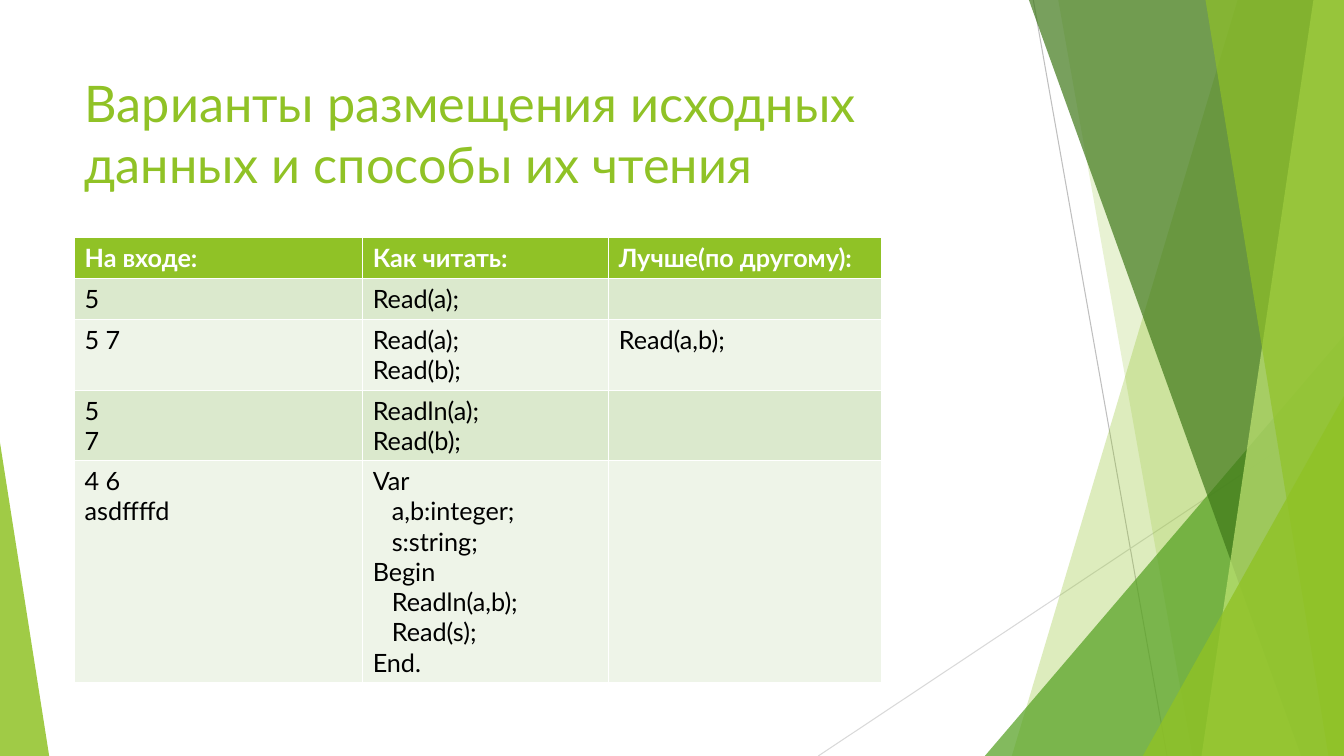
from lxml import etree
from pptx import Presentation
from pptx import util as u
from pptx.dml.color import RGBColor
from pptx.enum import shapes, text
from pptx.oxml import ns

WIDTH, HEIGHT = 33.87, 19.05
GREEN, DARK, LEAF, LIME = "90C226", "3F7819", "54A021", "C0E474"
BANDS = ("EEF4E8", "DBE9CD")


def colour(value):
    return RGBColor.from_string(value)


class SlideBuilder:
    font = "Lato"

    def __init__(self, deck):
        self.page = deck.slides.add_slide(deck.slide_layouts[5])

    def style(self, para, size, hex_colour, bold=False):
        para.font.name = self.font
        para.font.size = u.Pt(size)
        para.font.bold = bold
        para.font.color.rgb = colour(hex_colour)
        para.alignment = text.PP_ALIGN.LEFT

    def line(self, x1, y1, x2, y2, hex_colour):
        line = self.page.shapes.add_connector(
            shapes.MSO_CONNECTOR.STRAIGHT, *map(u.Cm, (x1, y1, x2, y2)))
        line.line.color.rgb = colour(hex_colour)
        line.line.width = u.Pt(0.75)
        etree.SubElement(line.element.spPr, ns.qn("a:effectLst"))

    def paint(self, shape, hex_colour, opacity):
        shape.shadow.inherit = False
        shape.line.fill.background()
        shape.fill.solid()
        shape.fill.fore_color.rgb = colour(hex_colour)
        tint = shape.element.spPr.find(".//" + ns.qn("a:srgbClr"))
        etree.SubElement(tint, ns.qn("a:alpha"), val=str(opacity * 1000))

    def band(self, top_x, bottom_x, hex_colour, opacity):
        """Fill from a slanted left edge to the right side of the slide."""
        outline = self.page.shapes.build_freeform(u.Cm(top_x), 0)
        corners = [(WIDTH, 0), (WIDTH, HEIGHT), (bottom_x, HEIGHT)]
        outline.add_line_segments([(u.Cm(x), u.Cm(y)) for x, y in corners])
        self.paint(outline.convert_to_shape(), hex_colour, opacity)

    def triangle(self, left, top, width, apex, hex_colour, opacity):
        """Stand a right-angled triangle on the bottom of the slide."""
        shape = self.page.shapes.add_shape(
            shapes.MSO_SHAPE.ISOSCELES_TRIANGLE,
            *map(u.Cm, (left, top, width, HEIGHT - top)))
        shape.adjustments[0] = apex
        self.paint(shape, hex_colour, opacity)

    def title(self, wording, left, top, width, height):
        box = self.page.shapes.title
        box.left, box.top, box.width, box.height = map(
            u.Cm, (left, top, width, height))
        frame = box.text_frame
        frame.text = wording
        frame.word_wrap = True
        frame.auto_size = text.MSO_AUTO_SIZE.NONE
        frame.vertical_anchor = text.MSO_ANCHOR.TOP
        self.style(frame.paragraphs[0], 36, GREEN)

    def table(self, rows, left, top, widths, heights):
        grid = self.page.shapes.add_table(
            len(rows), len(widths),
            *map(u.Cm, (left, top, sum(widths), sum(heights)))).table
        for column, width in zip(grid.columns, widths):
            column.width = u.Cm(width)
        for r, (row, height) in enumerate(zip(rows, heights)):
            grid.rows[r].height = u.Cm(height)
            for c, wording in enumerate(row):
                self.cell(grid.cell(r, c), wording, r)

    def cell(self, cell, wording, row):
        header = row == 0
        cell.fill.solid()
        cell.fill.fore_color.rgb = colour(GREEN if header else BANDS[row % 2])
        cell.text = wording.replace("\t", "")
        for para, source in zip(cell.text_frame.paragraphs, wording.split("\n")):
            self.style(para, 18, "FFFFFF" if header else "000000", header)
            if source.startswith("\t"):
                indent = para._p.get_or_add_pPr()
                indent.set("marL", str(u.Cm(0.48)))
                indent.set("indent", "0")


def main():
    deck = Presentation()
    deck.slide_width, deck.slide_height = u.Cm(WIDTH), u.Cm(HEIGHT)
    slide = SlideBuilder(deck)

    # Decoration on the right and left edges
    slide.line(26.04, 0, 29.41, HEIGHT, "BFBFBF")
    slide.line(WIDTH, 10.24, 20.62, HEIGHT, "D9D9D9")
    slide.band(31.19, 25.5, GREEN, 30)
    slide.band(26.67, 30.05, GREEN, 20)
    slide.triangle(24.82, 8.46, 9.05, 1, LEAF, 72)
    slide.band(25.93, 32.79, DARK, 70)
    slide.band(33.1, 30.28, LIME, 70)
    slide.band(30.38, 33.48, GREEN, 65)
    slide.triangle(28.8, 9.98, 5.07, 1, GREEN, 80)
    slide.triangle(0, 11.15, 1.24, 0, GREEN, 85)

    # Title
    slide.title("Варианты размещения исходных данных и способы их чтения",
                1.88, 1.7, 23.88, 3.66)

    # Table of input layouts; a tab marks an indented line of code
    program = ("Var\n\ta,b:integer;\n\ts:string;\nBegin\n"
               "\tReadln(a,b);\n\tRead(s);\nEnd.")
    rows = [
        ("На входе:", "Как читать:", "Лучше(по другому):"),
        ("5", "Read(a);", ""),
        ("5 7", "Read(a);\nRead(b);", "Read(a,b);"),
        ("5\n7", "Readln(a);\nRead(b);", ""),
        ("4 6\nasdffffd", program, ""),
    ]
    slide.table(rows, 1.88, 5.99, (7.26, 6.2, 6.88),
                (1.03, 1.03, 1.78, 1.78, 5.58))

    deck.save("out.pptx")


if __name__ == "__main__":
    main()
